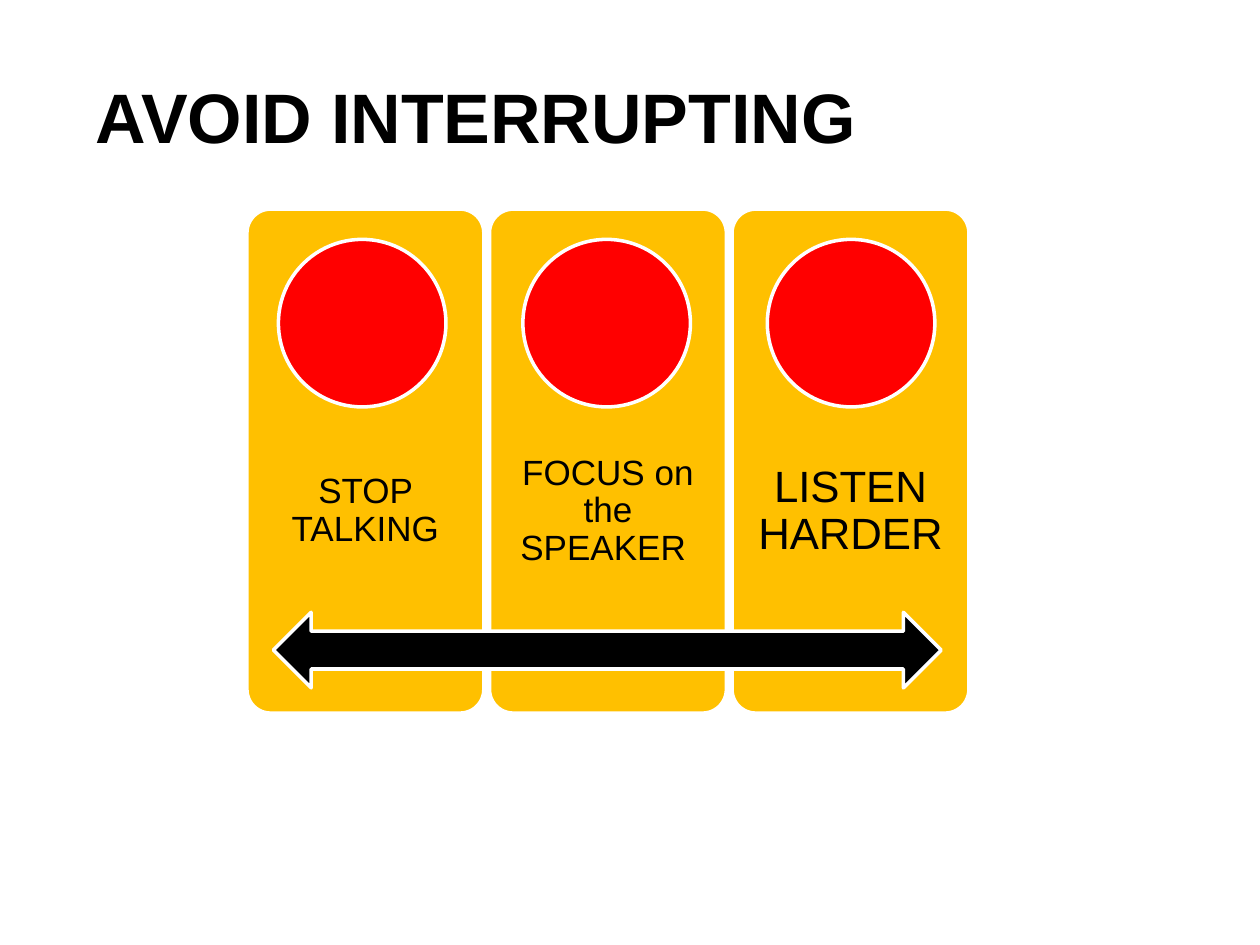
from pptx import Presentation
from pptx.dml.color import RGBColor
from pptx.enum.shapes import MSO_SHAPE
from pptx.enum.text import MSO_ANCHOR, PP_ALIGN
from pptx.util import Inches, Pt

PANEL = MSO_SHAPE.ROUNDED_RECTANGLE
LIGHT = MSO_SHAPE.OVAL
ARROW = MSO_SHAPE.LEFT_RIGHT_ARROW
MIDDLE = MSO_ANCHOR.MIDDLE
LEFT, CENTER = PP_ALIGN.LEFT, PP_ALIGN.CENTER

FONT = "Arial"
COLORS = {"amber": "FFC000", "red": "FF0000", "black": "000000", "white": "FFFFFF"}

# Label, text size, text margin
STEPS = [
    ("STOP TALKING", 20, 0.16),
    ("FOCUS on the SPEAKER ", 20, 0.16),
    ("LISTEN HARDER", 25, 0.19),
]
PANEL_X, PANEL_STEP, PANEL_W = 1.96, 1.925, 1.88
LIGHT_X, LIGHT_STEP, LIGHT_D = 2.21, 1.94, 1.33


def color(name):
    return RGBColor.from_string(COLORS[name])


def box(x, y, w, h):
    return [Inches(v) for v in (x, y, w, h)]


def write(frame, text, size, align, bold=False):
    frame.word_wrap = True
    frame.vertical_anchor = MIDDLE
    frame.text = text
    para = frame.paragraphs[0]
    para.alignment = align
    font = para.runs[0].font
    font.name, font.size, font.bold = FONT, Pt(size), bold
    font.color.rgb = color("black")
    return para


def add_title(slide, text):
    title = slide.shapes.title
    title.left, title.top, title.width, title.height = box(0.66, 0.5, 8.68, 0.83)
    write(title.text_frame, text, 40, LEFT, bold=True)


def add_solid(group, kind, place, fill):
    shape = group.shapes.add_shape(kind, *box(*place))
    shape.shadow.inherit = False
    shape.fill.solid()
    shape.fill.fore_color.rgb = color(fill)
    shape.line.color.rgb = color("white")
    shape.line.width = Pt(2)
    return shape


def add_label(group, place, text, size, inset):
    frame = group.shapes.add_textbox(*box(*place)).text_frame
    frame.margin_left = frame.margin_right = Inches(inset)
    frame.margin_top = frame.margin_bottom = Inches(inset)
    write(frame, text, size, CENTER).line_spacing = 0.9


def add_signal(group, i, text, size, inset):
    """Add one panel with its label and light."""
    x = PANEL_X + i * PANEL_STEP
    panel = add_solid(group, PANEL, (x, 1.66, PANEL_W, 4), "amber")
    panel.adjustments[0] = 0.1
    add_label(group, (x, 3.26, PANEL_W, 1.6), text, size, inset)
    place = (LIGHT_X + i * LIGHT_STEP, 1.9, LIGHT_D, LIGHT_D)
    add_solid(group, LIGHT, place, "red")


def main():
    prs = Presentation()
    prs.slide_width, prs.slide_height = Inches(10), Inches(7.5)
    slide = prs.slides.add_slide(prs.slide_layouts[5])
    add_title(slide, "AVOID INTERRUPTING")
    group = slide.shapes.add_group_shape()
    for i, step in enumerate(STEPS):
        add_signal(group, i, *step)
    add_solid(group, ARROW, (2.17, 4.86, 5.3, 0.6), "black")
    prs.save("out.pptx")


if __name__ == "__main__":
    main()
